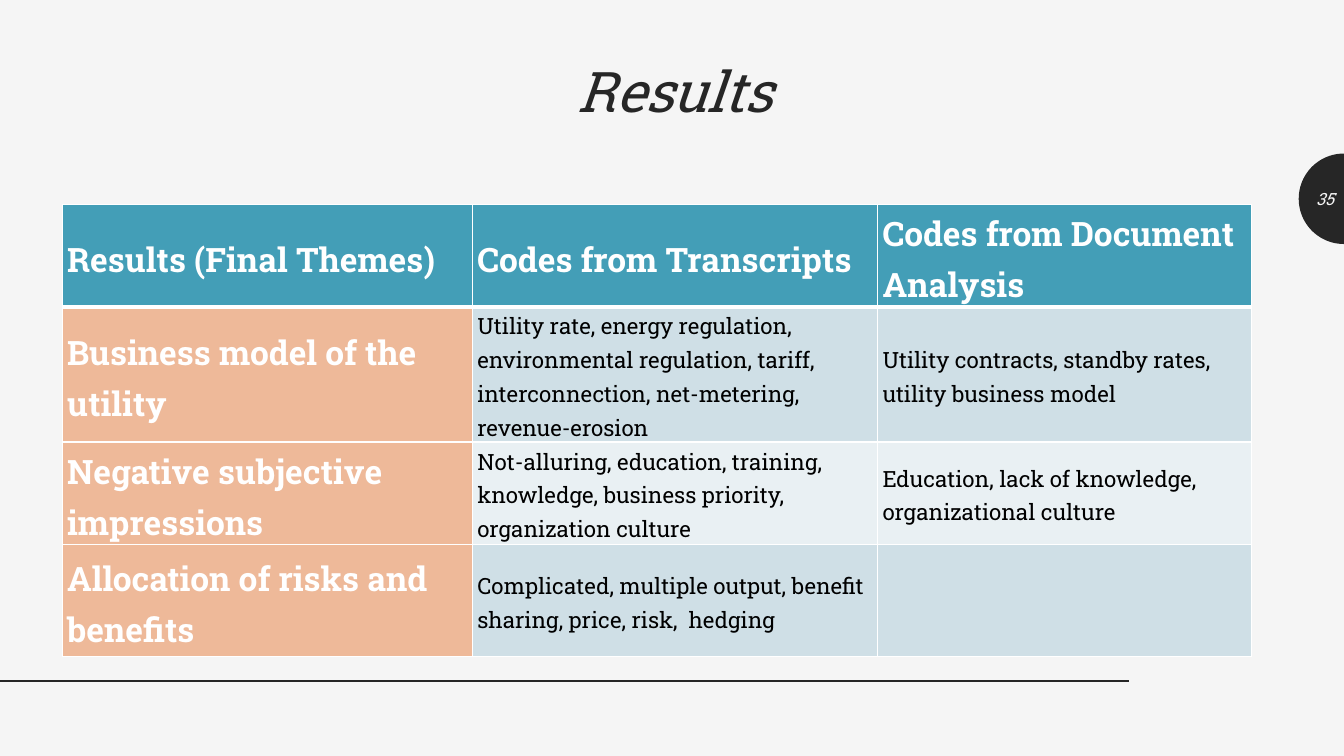
import math

from lxml import etree
from pptx import Presentation
from pptx.dml.color import RGBColor
from pptx.enum.shapes import MSO_CONNECTOR
from pptx.enum.text import MSO_ANCHOR, PP_ALIGN
from pptx.oxml.ns import qn
from pptx.util import Cm, Pt

STRAIGHT = MSO_CONNECTOR.STRAIGHT
TOP, MIDDLE = MSO_ANCHOR.TOP, MSO_ANCHOR.MIDDLE
LEFT, CENTER, RIGHT = PP_ALIGN.LEFT, PP_ALIGN.CENTER, PP_ALIGN.RIGHT

COLORS = {
    "paper": "F5F5F5",
    "ink": "262626",
    "black": "000000",
    "white": "FFFFFF",
    "header": "439EB7",
    "theme": "EEB999",
    "band_dark": "CFDFE6",
    "band_light": "E9F0F3",
}
SLIDE_W, SLIDE_H = 33.87, 19.05
COLUMN_WIDTHS = [10.34, 10.21, 9.42]
ROW_HEIGHTS = [1.63, 3.2, 2.54, 2.84]
RESULTS = [
    ["Results (Final Themes)", "Codes from Transcripts", "Codes from Document Analysis"],
    ["Business model of the utility",
     "Utility rate, energy regulation, environmental regulation, tariff, "
     "interconnection, net-metering, revenue-erosion",
     "Utility contracts, standby rates, utility business model"],
    ["Negative subjective impressions",
     "Not-alluring, education, training, knowledge, business priority, organization culture",
     "Education, lack of knowledge, organizational culture"],
    ["Allocation of risks and benefits",
     "Complicated, multiple output, benefit sharing, price, risk,  hedging",
     ""],
]


def rgb(color):
    return RGBColor.from_string(COLORS[color])


class SlideBuilder:
    font = "Roboto Slab"

    def __init__(self, slide):
        self.slide = slide
        slide.background.fill.solid()
        slide.background.fill.fore_color.rgb = rgb("paper")

    def add_words(self, paragraph, text, size, color, bold=False, italic=False,
                  align=LEFT, spacing=1.0):
        paragraph.alignment = align
        paragraph.line_spacing = spacing
        run = paragraph.add_run()
        run.text = text
        run.font.name = self.font
        run.font.size = Pt(size)
        run.font.bold = bold
        run.font.italic = italic
        run.font.color.rgb = rgb(color)

    def text(self, left, top, width, height, text, size, color, anchor=TOP, **style):
        box = self.slide.shapes.add_textbox(Cm(left), Cm(top), Cm(width), Cm(height))
        box.text_frame.word_wrap = True
        box.text_frame.vertical_anchor = anchor
        self.add_words(box.text_frame.paragraphs[0], text, size, color, **style)

    def half_disc(self, center_x, center_y, radius, color, steps=48):
        """Draw the left half of a disc."""
        angles = [math.pi * (0.5 + step / steps) for step in range(steps + 1)]
        points = [(Cm(center_x + radius * math.cos(a)), Cm(center_y + radius * math.sin(a)))
                  for a in angles]
        builder = self.slide.shapes.build_freeform(*points[0])
        builder.add_line_segments(points[1:], close=True)
        disc = builder.convert_to_shape()
        disc.shadow.inherit = False
        disc.fill.solid()
        disc.fill.fore_color.rgb = rgb(color)
        disc.line.fill.background()

    def line(self, x1, y1, x2, y2, color, width):
        rule = self.slide.shapes.add_connector(STRAIGHT, Cm(x1), Cm(y1), Cm(x2), Cm(y2))
        rule.line.color.rgb = rgb(color)
        rule.line.width = Pt(width)
        etree.SubElement(rule._element.spPr, qn("a:effectLst"))

    def borders(self, cell, top=1, bottom=1):
        """Give a cell white borders; call before setting its fill."""
        properties = cell._tc.get_or_add_tcPr()
        for side, width in (("L", 1), ("R", 1), ("T", top), ("B", bottom)):
            edge = etree.SubElement(properties, qn(f"a:ln{side}"), w=str(Pt(width)))
            fill = etree.SubElement(edge, qn("a:solidFill"))
            etree.SubElement(fill, qn("a:srgbClr"), val=COLORS["white"])

    def table(self, left, top, rows, widths, heights):
        table = self.slide.shapes.add_table(
            len(rows), len(widths), Cm(left), Cm(top), Cm(sum(widths)), Cm(sum(heights))).table
        table.first_row = table.horz_banding = False
        for column, width in zip(table.columns, widths):
            column.width = Cm(width)
        for row, height in zip(table.rows, heights):
            row.height = Cm(height)
        for r, texts in enumerate(rows):
            for c, text in enumerate(texts):
                self.cell(table.cell(r, c), r, c, text)

    def cell(self, cell, r, c, text):
        self.borders(cell, top=3 if r == 1 else 1, bottom=3 if r == 0 else 1)
        if r == 0:
            color = "header"
        elif c == 0:
            color = "theme"
        else:
            color = "band_dark" if r % 2 else "band_light"
        cell.fill.solid()
        cell.fill.fore_color.rgb = rgb(color)
        cell.vertical_anchor = MIDDLE
        cell.margin_left = cell.margin_right = Cm(0.12)
        cell.margin_top = cell.margin_bottom = 0
        heading = r == 0 or c == 0
        if text:
            self.add_words(cell.text_frame.paragraphs[0], text, 24 if heading else 16,
                           "white" if heading else "black", bold=heading, spacing=1.15)


def main():
    deck = Presentation()
    deck.slide_width, deck.slide_height = Cm(SLIDE_W), Cm(SLIDE_H)
    page = SlideBuilder(deck.slides.add_slide(deck.slide_layouts[6]))
    page.half_disc(SLIDE_W, 5.01, 1.14, "ink")
    page.line(28.45, 17.16, 0, 17.16, "ink", 2)
    page.table(1.57, 5.16, RESULTS, COLUMN_WIDTHS, ROW_HEIGHTS)
    page.text(2.11, 1.55, 29.82, 3, "Results", 40, "ink",
              italic=True, align=CENTER, spacing=0.85)
    page.text(32.73, 4.5, 1.14, 1.02, "35", 12, "paper", anchor=MIDDLE,
              italic=True, align=RIGHT)
    deck.save("out.pptx")


if __name__ == "__main__":
    main()
